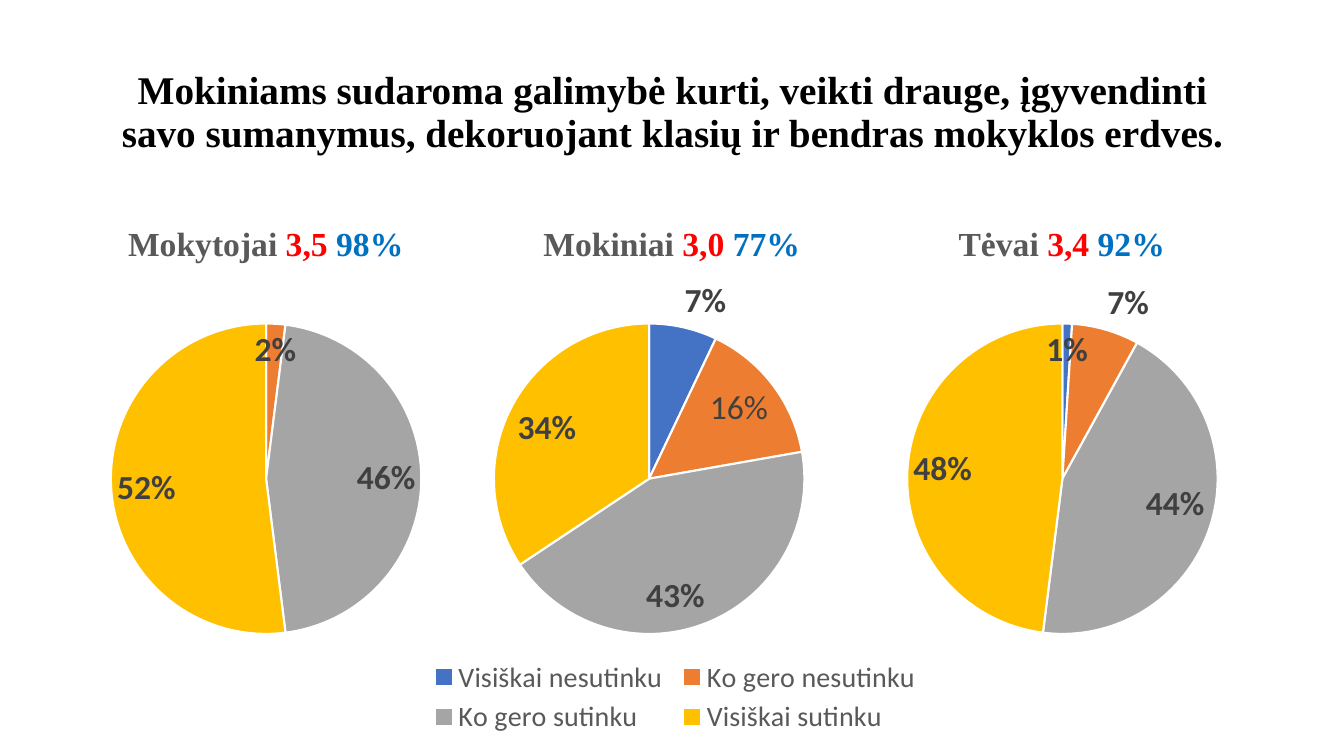
import dataclasses

import lxml.etree
import pptx
import pptx.chart.data
import pptx.dml.color
import pptx.enum.chart
import pptx.enum.text
import pptx.oxml
import pptx.oxml.ns
import pptx.util


@dataclasses.dataclass(frozen=True)
class Theme:
    heading_font: str = "Times New Roman"
    body_font: str = "Calibri"
    black: str = "000000"
    white: str = "FFFFFF"
    grey: str = "595959"
    label: str = "404040"
    score: str = "FF0000"
    share: str = "0070C0"
    slices: tuple = ("4472C4", "ED7D31", "A5A5A5", "FFC000")
    heading_size: int = 28
    chart_size: int = 24
    legend_size: int = 20


@dataclasses.dataclass(frozen=True)
class Survey:
    """One pie; area, title_at and centre are in grid cells on the slide."""
    group: str
    score: str
    share: str
    values: tuple
    area: tuple
    title_at: tuple
    centre: tuple
    outside: tuple = ()
    typed_labels: tuple = ()
    legend_area: tuple = ()


THEME = Theme()
COLUMNS, ROWS = 133.33, 75
CELL = pptx.util.Inches(0.1)
RADIUS = 15.4
ANSWERS = ("Visiškai nesutinku", "Ko gero nesutinku",
           "Ko gero sutinku", "Visiškai sutinku")
HEADING = ("Mokiniams sudaroma galimybė kurti, veikti drauge, įgyvendinti "
           "savo sumanymus, dekoruojant klasių ir bendras mokyklos erdves.")
SURVEYS = (
    Survey("Mokytojai", "3,5", "98%", (0, 0.02, 0.46, 0.52),
           (5.9, 20, 41, 44.4), (12.4, 21.9), (26.4, 47.5)),
    Survey("Mokiniai", "3,0", "77%", (0.07, 0.15, 0.43, 0.34),
           (22.2, 20, 88.9, 53.5), (53.6, 21.9), (64.4, 47.5),
           outside=(0,), typed_labels=((1, "16%"),),
           legend_area=(42, 65, 50, 8.3)),
    Survey("Tėvai", "3,4", "92%", (0.01, 0.07, 0.44, 0.48),
           (78.5, 20, 53.7, 44.4), (94.8, 21.9), (105.4, 47.5),
           outside=(1,)),
)


def cells(*lengths):
    return [round(length * CELL) for length in lengths]


def colour(code):
    return pptx.dml.color.RGBColor.from_string(code)


def style(font, name, size, code, bold=False):
    font.name = name
    font.size = pptx.util.Pt(size)
    font.bold = bold
    font.color.rgb = colour(code)


def add_span(para, text, name, size, code, bold=False):
    span = para.add_run()
    span.text = text
    style(span.font, name, size, code, bold)


def add_heading(page):
    box = page.shapes.add_textbox(*cells(9.2, 4, 115, 14.5))
    frame = box.text_frame
    frame.word_wrap = True
    frame.vertical_anchor = pptx.enum.text.MSO_ANCHOR.MIDDLE
    para = frame.paragraphs[0]
    para.alignment = pptx.enum.text.PP_ALIGN.CENTER
    para.line_spacing = 0.9
    add_span(para, HEADING, THEME.heading_font, THEME.heading_size,
             THEME.black, True)


def place(part, index, chart_area, left, top, width=None, height=None):
    """Fix a chart part at a spot given in grid cells on the slide."""
    for old in part.findall(pptx.oxml.ns.qn("c:layout")):
        part.remove(old)
    area_left, area_top, area_width, area_height = chart_area
    layout = pptx.oxml.parse_xml(
        f'<c:layout {pptx.oxml.ns.nsdecls("c")}><c:manualLayout/></c:layout>')
    settings = [("xMode", "edge"), ("yMode", "edge"),
                ("x", (left - area_left) / area_width),
                ("y", (top - area_top) / area_height)]
    if width:
        settings += [("w", width / area_width), ("h", height / area_height)]
    if part.tag == pptx.oxml.ns.qn("c:plotArea"):
        settings.insert(0, ("layoutTarget", "inner"))
    for name, value in settings:
        item = lxml.etree.SubElement(layout[0], pptx.oxml.ns.qn(f"c:{name}"))
        item.set("val", str(value))
    part.insert(index, layout)


def clear_background(chart):
    """Let overlapping charts show through each other."""
    chart.element.find(pptx.oxml.ns.qn("c:chart")).addnext(
        pptx.oxml.parse_xml(
            f'<c:spPr {pptx.oxml.ns.nsdecls("c", "a")}><a:noFill/>'
            '<a:ln><a:noFill/></a:ln></c:spPr>'))


def add_title(chart, survey):
    chart.has_title = True
    para = chart.chart_title.text_frame.paragraphs[0]
    for text, code in ((f"{survey.group} ", THEME.grey),
                       (f"{survey.score} ", THEME.score),
                       (survey.share, THEME.share)):
        add_span(para, text, THEME.heading_font, THEME.chart_size, code, True)
    place(chart.chart_title._element, 1, survey.area, *survey.title_at)


def add_legend(chart, survey):
    chart.has_legend = True
    legend = chart.legend
    legend.position = pptx.enum.chart.XL_LEGEND_POSITION.BOTTOM
    legend.include_in_layout = False
    style(legend.font, THEME.body_font, THEME.legend_size, THEME.grey)
    place(legend._element, 1, survey.area, *survey.legend_area)


def style_slices(series, survey):
    positions = pptx.enum.chart.XL_LABEL_POSITION
    typed = dict(survey.typed_labels)
    labels = series.data_labels
    labels.show_value = False
    labels.number_format = "0%"
    labels.number_format_is_linked = False
    label_style = (THEME.body_font, THEME.chart_size, THEME.label)
    style(labels.font, *label_style, True)
    for index, value in enumerate(survey.values):
        point = series.points[index]
        point.format.fill.solid()
        point.format.fill.fore_color.rgb = colour(THEME.slices[index])
        point.format.line.color.rgb = colour(THEME.white)
        point.format.line.width = pptx.util.Pt(1.5)
        if not value:
            continue
        label = point.data_label
        if index in typed:
            add_span(label.text_frame.paragraphs[0], typed[index],
                     *label_style)
        else:
            style(label.font, *label_style, True)
        label.position = (positions.OUTSIDE_END if index in survey.outside
                          else positions.INSIDE_END)


def add_pie(page, survey):
    data = pptx.chart.data.CategoryChartData(number_format="0%")
    data.categories = ANSWERS
    data.add_series(survey.group, survey.values)
    chart = page.shapes.add_chart(pptx.enum.chart.XL_CHART_TYPE.PIE,
                                  *cells(*survey.area), data).chart
    style(chart.font, THEME.body_font, THEME.chart_size, THEME.label)
    clear_background(chart)
    add_title(chart, survey)
    chart.has_legend = False
    if survey.legend_area:
        add_legend(chart, survey)
    plot = chart.plots[0]
    plot.vary_by_categories = True
    style_slices(plot.series[0], survey)
    plot_area = chart.element.find(".//" + pptx.oxml.ns.qn("c:plotArea"))
    across, down = survey.centre
    place(plot_area, 0, survey.area, across - RADIUS, down - RADIUS,
          2 * RADIUS, 2 * RADIUS)


def main():
    deck = pptx.Presentation()
    deck.slide_width, deck.slide_height = cells(COLUMNS, ROWS)
    page = deck.slides.add_slide(deck.slide_layouts[6])
    add_heading(page)
    for survey in SURVEYS:
        add_pie(page, survey)
    deck.save("out.pptx")


if __name__ == "__main__":
    main()
